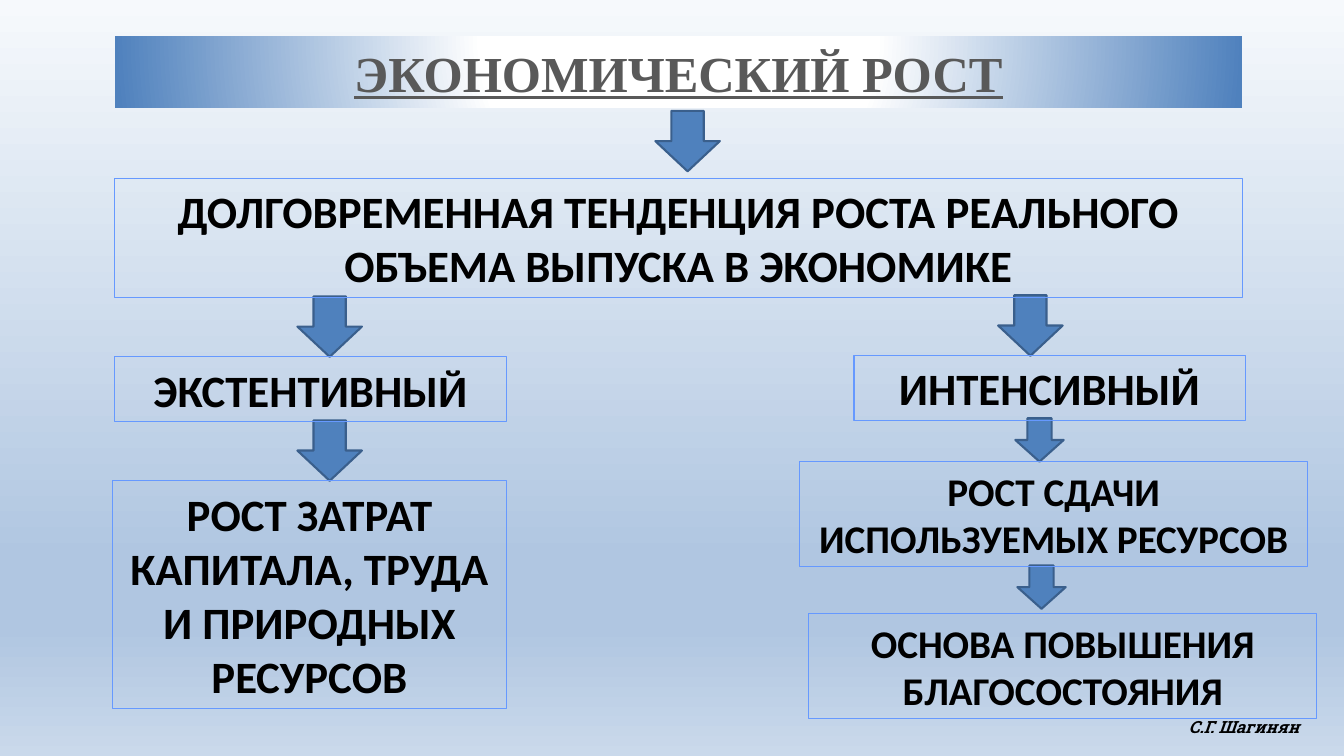
from lxml import etree
from pptx import Presentation
from pptx.dml.color import RGBColor
from pptx.enum.shapes import MSO_SHAPE
from pptx.enum.text import MSO_ANCHOR, PP_ALIGN
from pptx.oxml.ns import qn
from pptx.util import Inches, Pt

RECT, ARROW = MSO_SHAPE.RECTANGLE, MSO_SHAPE.DOWN_ARROW
CENTER, LEFT = PP_ALIGN.CENTER, PP_ALIGN.LEFT
MIDDLE = MSO_ANCHOR.MIDDLE

COLORS = {
    "blue": "4F81BD", "edge": "3A5F8C", "frame": "6699FF",
    "white": "FFFFFF", "gray": "595959", "black": "000000",
    "top": "F6F9FC", "mid": "B0C6E1", "base": "CAD9EB",
}
SKY = [(0, "top"), (74, "mid"), (83, "mid"), (100, "base")]
GLOW = [(0, "white"), (35, "white"), (100, "blue")]

TITLE = ("ЭКОНОМИЧЕСКИЙ РОСТ", (1.14, 0.36, 11.18, 0.71))
AUTHOR = ("С.Г. Шагинян", (11.69, 7.06, 1.44, 0.3))
BOXES = [
    ("ДОЛГОВРЕМЕННАЯ ТЕНДЕНЦИЯ РОСТА РЕАЛЬНОГО ОБЪЕМА ВЫПУСКА В ЭКОНОМИКЕ",
     (1.14, 1.77, 11.18, 1.18), 32),
    ("ЭКСТЕНТИВНЫЙ", (1.14, 3.54, 3.88, 0.64), 32),
    ("РОСТ ЗАТРАТ КАПИТАЛА, ТРУДА И ПРИРОДНЫХ РЕСУРСОВ",
     (1.12, 4.77, 3.9, 2.26), 32),
    ("ИНТЕНСИВНЫЙ", (8.47, 3.53, 3.88, 0.64), 32),
    ("РОСТ СДАЧИ ИСПОЛЬЗУЕМЫХ РЕСУРСОВ", (7.93, 4.58, 5.04, 1.04), 28),
    ("ОСНОВА ПОВЫШЕНИЯ БЛАГОСОСТОЯНИЯ", (8.02, 6.09, 5.04, 1.04), 28),
]
BIG, SMALL = (0.64, 0.6), (0.48, 0.43)
ARROWS = [
    (6.5, 1.1, BIG), (2.95, 2.94, BIG), (2.95, 4.17, BIG),
    (9.9, 2.93, BIG), (10.07, 4.15, SMALL), (10.09, 5.61, SMALL),
]


def color(name):
    return RGBColor.from_string(COLORS[name])


def blend(fill, root, stops):
    fill.gradient()
    grad = root.find(".//" + qn("a:gradFill"))
    for part in list(grad):
        grad.remove(part)
    group = etree.SubElement(grad, qn("a:gsLst"))
    for pos, name in stops:
        stop = etree.SubElement(group, qn("a:gs"), pos=str(pos * 1000))
        etree.SubElement(stop, qn("a:srgbClr"), val=COLORS[name])
    return grad


def place(slide, kind, spot):
    shape = slide.shapes.add_shape(kind, *map(Inches, spot))
    shape.shadow.inherit = False
    return shape


def outline(shape, name, width):
    shape.line.color.rgb = color(name)
    shape.line.width = Pt(width)


def write(shape, text, size, face="Calibri", tint="black", align=CENTER):
    frame = shape.text_frame
    frame.text = text
    frame.vertical_anchor = MIDDLE
    para = frame.paragraphs[0]
    para.alignment = align
    font = para.runs[0].font
    font.name, font.size, font.bold = face, Pt(size), True
    font.color.rgb = color(tint)
    return font


def main():
    """Build the economic growth slide."""
    deck = Presentation()
    deck.slide_width, deck.slide_height = Inches(13.33), Inches(7.5)
    slide = deck.slides.add_slide(deck.slide_layouts[6])
    sky = blend(slide.background.fill, slide.element, SKY)
    etree.SubElement(sky, qn("a:lin"), ang=str(90 * 60000), scaled="0")

    text, spot = TITLE
    banner = place(slide, RECT, spot)
    glow = blend(banner.fill, banner.element, GLOW)
    ring = etree.SubElement(glow, qn("a:path"), path="circle")
    etree.SubElement(ring, qn("a:fillToRect"),
                     l="50000", t="-80000", r="50000", b="180000")
    banner.line.fill.background()
    write(banner, text, 36, "Times New Roman", "gray").underline = True

    for left, top, size in ARROWS:
        arrow = place(slide, ARROW, (left, top, *size))
        arrow.fill.solid()
        arrow.fill.fore_color.rgb = color("blue")
        outline(arrow, "edge", 1.5)

    for text, spot, size in BOXES:
        box = place(slide, RECT, spot)
        box.fill.background()
        outline(box, "frame", 0.75)
        write(box, text, size)

    text, spot = AUTHOR
    label = slide.shapes.add_textbox(*map(Inches, spot))
    label.text_frame.word_wrap = False
    write(label, text, 12, "Roboto Slab", align=LEFT).italic = True

    deck.save("out.pptx")


if __name__ == "__main__":
    main()
